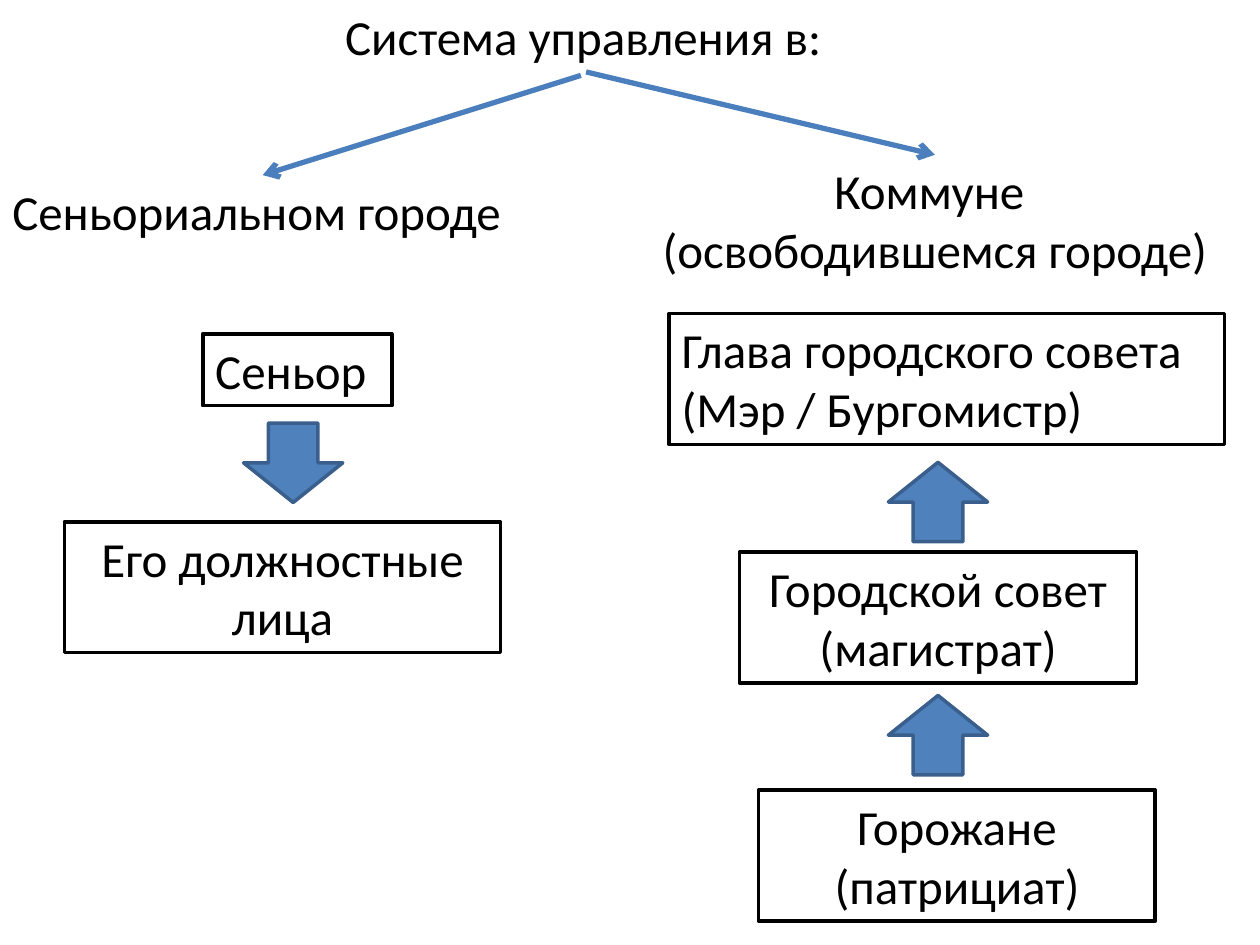
from dataclasses import dataclass

from lxml.etree import SubElement
from pptx import Presentation
from pptx.dml.color import RGBColor
from pptx.enum.shapes import MSO_CONNECTOR, MSO_SHAPE
from pptx.enum.text import MSO_ANCHOR, PP_ALIGN
from pptx.oxml.ns import qn
from pptx.util import Cm, Pt


@dataclass(frozen=True)
class Theme:
    font: str = "Calibri"
    size: int = 28
    text: str = "000000"
    box_fill: str = "FFFFFF"
    box_line: str = "000000"
    arrow_fill: str = "4F81BD"
    arrow_line: str = "3A5F8C"
    branch: str = "4B7EBC"
    outline: int = 2
    branch_width: int = 3


THEME = Theme()
TOP, BOTTOM = 0, 2
ONE_LINE, TWO_LINES = 1.45, 2.64
ARROW_W, ARROW_H = 1.6, 2
DOWN, UP = 90, 270


def rgb(value):
    return RGBColor.from_string(value)


def write(s, text, align=PP_ALIGN.LEFT, size=THEME.size, color=THEME.text):
    """Fill a shape with one paragraph per line of text."""
    tf = s.text_frame
    tf.word_wrap = True
    tf.vertical_anchor = MSO_ANCHOR.TOP
    for i, line in enumerate(text.split("\n")):
        p = tf.paragraphs[0] if i == 0 else tf.add_paragraph()
        p.alignment = align
        r = p.add_run()
        r.text = line
        r.font.name = THEME.font
        r.font.size = Pt(size)
        r.font.color.rgb = rgb(color)


def add_label(sp, x, y, w, h, text, **fmt):
    s = sp.add_textbox(Cm(x), Cm(y), Cm(w), Cm(h))
    write(s, text, **fmt)
    return s


def add_filled(sp, kind, x, y, w, h, fill, line):
    s = sp.add_shape(kind, Cm(x), Cm(y), Cm(w), Cm(h))
    s.shadow.inherit = False
    s.fill.solid()
    s.fill.fore_color.rgb = rgb(fill)
    s.line.color.rgb = rgb(line)
    s.line.width = Pt(THEME.outline)
    return s


def add_box(sp, x, y, w, h, text, **fmt):
    s = add_filled(sp, MSO_SHAPE.RECTANGLE, x, y, w, h,
                   THEME.box_fill, THEME.box_line)
    write(s, text, **fmt)


def add_block_arrow(sp, x, y, rotation):
    s = add_filled(sp, MSO_SHAPE.RIGHT_ARROW, x, y, ARROW_W, ARROW_H,
                   THEME.arrow_fill, THEME.arrow_line)
    s.rotation = rotation


def add_branch(sp, x, y, target):
    """Draw an arrow from a point to the top middle of the target."""
    c = sp.add_connector(MSO_CONNECTOR.STRAIGHT, Cm(x), Cm(y), Cm(x), Cm(y))
    c.end_connect(target, TOP)
    c.line.color.rgb = rgb(THEME.branch)
    c.line.width = Pt(THEME.branch_width)
    SubElement(c.line._get_or_add_ln(), qn("a:tailEnd"), type="arrow")
    SubElement(c._element.spPr, qn("a:effectLst"))
    return c


def main():
    prs = Presentation()
    prs.slide_width, prs.slide_height = Cm(25.4), Cm(19.05)
    sp = prs.slides.add_slide(prs.slide_layouts[6]).shapes
    center = PP_ALIGN.CENTER

    title = add_label(sp, 6.71, 0, 10.21, ONE_LINE, "Система управления в:")
    seigneurial = add_label(sp, 0, 3.53, 10.59, ONE_LINE,
                            "Сеньориальном городе")
    commune = add_label(sp, 12.7, 3.12, 12.29, TWO_LINES,
                        "Коммуне \n(освободившемся городе)", align=center)
    add_branch(sp, 11.71, 1.52, seigneurial)
    add_branch(sp, 11.81, ONE_LINE, commune).begin_connect(title, BOTTOM)

    add_box(sp, 4.09, 6.73, 3.81, ONE_LINE, "Сеньор")
    add_block_arrow(sp, 5.11, 8.33, DOWN)
    add_box(sp, 1.3, 10.52, 8.79, TWO_LINES, "Его должностные лица",
            align=center)

    add_box(sp, 13.49, 6.32, 11.2, TWO_LINES,
            "Глава городского совета\n(Мэр / Бургомистр)")
    add_box(sp, 14.91, 11.13, 8, TWO_LINES, "Городской совет\n(магистрат)",
            align=center)
    add_box(sp, 15.29, 15.93, 8, TWO_LINES, "Горожане\n(патрициат)",
            align=center)
    for y in (9.12, 13.82):
        add_block_arrow(sp, 18.11, y, UP)

    prs.save("out.pptx")


if __name__ == "__main__":
    main()
